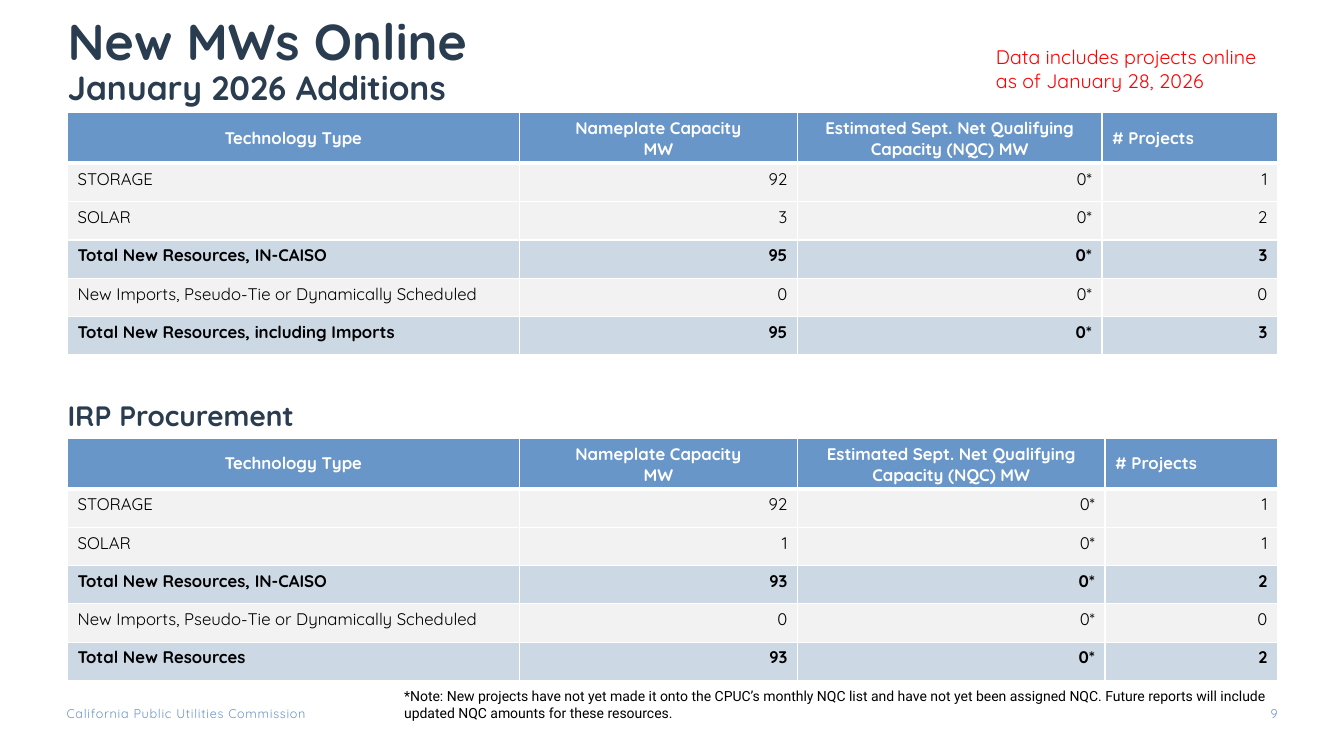
"""Build the slide of new megawatts online, with two capacity tables."""
from dataclasses import dataclass

from lxml.etree import SubElement
from pptx import Presentation
from pptx.dml.color import RGBColor
from pptx.enum.text import MSO_ANCHOR, PP_ALIGN
from pptx.oxml.ns import qn
from pptx.slide import Slide
from pptx.table import _Cell
from pptx.util import Inches, Pt

NAVY = RGBColor(0x2A, 0x3C, 0x50)
BLUE = RGBColor(0x69, 0x96, 0xC9)
PALE_BLUE = RGBColor(0xCC, 0xD8, 0xE4)
GRAY = RGBColor(0xF2, 0xF2, 0xF2)
WHITE = RGBColor(0xFF, 0xFF, 0xFF)
BLACK = RGBColor(0x00, 0x00, 0x00)
RED = RGBColor(0xFF, 0x00, 0x00)

HEADINGS = (
    "Technology Type",
    "Nameplate Capacity\vMW",
    "Estimated Sept. Net Qualifying Capacity (NQC) MW",
    "# Projects",
)
HEADER_HEIGHT = 0.5
ROW_HEIGHT = 0.38
PLAIN_MARGINS = (0.1, 0.05, 0.1, 0.05)
TITLE_MARGINS = (0, 0.05, 0.1, 0.05)
NO_MARGINS = (0, 0, 0, 0)


@dataclass(frozen=True)
class Line:
    text: str
    size: float


@dataclass(frozen=True)
class Label:
    lines: tuple[Line, ...]
    left: float
    top: float
    width: float
    height: float
    color: RGBColor
    font: str = "Quicksand"
    bold: bool = False
    margins: tuple[float, ...] = PLAIN_MARGINS
    anchor: MSO_ANCHOR = MSO_ANCHOR.TOP
    align: PP_ALIGN = PP_ALIGN.LEFT
    line_spacing: float = 1.0
    letter_spacing: int = 0


@dataclass(frozen=True)
class CapacityTable:
    top: float
    widths: tuple[float, ...]
    rows: tuple[tuple[str, ...], ...]


LABELS = (
    Label((Line("California Public Utilities Commission", 9),), 0.66, 7, 3.21, 0.15,
          BLUE, margins=NO_MARGINS, letter_spacing=50),
    Label((Line("New MWs Online", 36), Line("January 2026 Additions", 24)),
          0.67, -0.33, 12, 1.45, NAVY, bold=True, margins=TITLE_MARGINS,
          anchor=MSO_ANCHOR.BOTTOM, line_spacing=0.9),
    Label((Line("9", 9),), 12.25, 7, 0.42, 0.2, BLUE, margins=NO_MARGINS,
          align=PP_ALIGN.RIGHT),
    Label((Line("IRP Procurement", 20),), 0.67, 2.89, 12, 1.45, NAVY, bold=True,
          margins=TITLE_MARGINS, anchor=MSO_ANCHOR.BOTTOM, line_spacing=0.9),
    Label((Line("*Note: New projects have not yet made it onto the CPUC’s monthly NQC list "
                "and have not yet been assigned NQC. Future reports will include updated "
                "NQC amounts for these resources.", 10),),
          3.91, 6.77, 8.94, 0.64, BLACK, font="Roboto"),
    Label((Line("Data includes projects online", 14), Line("as of January 28, 2026", 14)),
          9.78, 0.4, 3.5, 0.64, RED),
)

TABLES = (
    CapacityTable(1.12, (4.48, 2.76, 3.02, 1.74), (
        ("STORAGE", "92", "0*", "1"),
        ("SOLAR", "3", "0*", "2"),
        ("Total New Resources, IN-CAISO", "95", "0*", "3"),
        ("New Imports, Pseudo-Tie or Dynamically Scheduled", "0", "0*", "0"),
        ("Total New Resources, including Imports", "95", "0*", "3"),
    )),
    CapacityTable(4.35, (4.48, 2.76, 3.05, 1.71), (
        ("STORAGE", "92", "0*", "1"),
        ("SOLAR", "1", "0*", "1"),
        ("Total New Resources, IN-CAISO", "93", "0*", "2"),
        ("New Imports, Pseudo-Tie or Dynamically Scheduled", "0", "0*", "0"),
        ("Total New Resources", "93", "0*", "2"),
    )),
)


def add_label(page: Slide, label: Label) -> None:
    box = page.shapes.add_textbox(Inches(label.left), Inches(label.top),
                                  Inches(label.width), Inches(label.height))
    frame = box.text_frame
    frame.word_wrap = True
    frame.vertical_anchor = label.anchor
    (frame.margin_left, frame.margin_top,
     frame.margin_right, frame.margin_bottom) = map(Inches, label.margins)
    para = frame.paragraphs[0]
    para.alignment = label.align
    para.line_spacing = label.line_spacing
    para.font.name = label.font
    para.font.bold = label.bold
    para.font.color.rgb = label.color
    para.font.size = Pt(label.lines[0].size)
    for index, line in enumerate(label.lines):
        if index:
            para.add_line_break()
        span = para.add_run()
        span.text = line.text
        if line.size != label.lines[0].size:
            span.font.size = Pt(line.size)
        if label.letter_spacing:
            span.font._element.set("spc", str(label.letter_spacing))


def add_borders(cell: _Cell, row_index: int) -> None:
    properties = cell._tc.get_or_add_tcPr()
    thick_side = {0: "lnB", 1: "lnT"}.get(row_index)
    for side in ("lnL", "lnR", "lnT", "lnB"):
        width = Pt(3 if side == thick_side else 1)
        border = SubElement(properties, qn(f"a:{side}"), w=str(width))
        fill = SubElement(border, qn("a:solidFill"))
        SubElement(fill, qn("a:srgbClr"), val=str(WHITE))


def fill_cell(cell: _Cell, text: str, row_index: int, column: int, is_total: bool) -> None:
    is_header = row_index == 0
    add_borders(cell, row_index)
    cell.fill.solid()
    cell.fill.fore_color.rgb = BLUE if is_header else PALE_BLUE if is_total else GRAY
    cell.text = text
    para = cell.text_frame.paragraphs[0]
    if is_header:
        cell.vertical_anchor = MSO_ANCHOR.MIDDLE
        para.alignment = PP_ALIGN.LEFT if column == 3 else PP_ALIGN.CENTER
    else:
        para.alignment = PP_ALIGN.RIGHT if column else PP_ALIGN.LEFT
    para.font.name = "Quicksand"
    para.font.size = Pt(12)
    para.font.bold = is_header or is_total
    para.font.color.rgb = WHITE if is_header else BLACK


def add_capacity_table(page: Slide, capacity: CapacityTable) -> None:
    rows = (HEADINGS, *capacity.rows)
    height = HEADER_HEIGHT + ROW_HEIGHT * len(capacity.rows)
    table = page.shapes.add_table(len(rows), len(HEADINGS), Inches(0.67),
                                  Inches(capacity.top), Inches(12), Inches(height)).table
    for column, width in zip(table.columns, capacity.widths):
        column.width = Inches(width)
    for row_index, texts in enumerate(rows):
        table.rows[row_index].height = Inches(ROW_HEIGHT if row_index else HEADER_HEIGHT)
        is_total = texts[0].startswith("Total")
        for column_index, text in enumerate(texts):
            fill_cell(table.cell(row_index, column_index), text, row_index,
                      column_index, is_total)


def main() -> None:
    deck = Presentation()
    deck.slide_width = Inches(13.33)
    deck.slide_height = Inches(7.5)
    page = deck.slides.add_slide(deck.slide_layouts[6])
    for label in LABELS:
        add_label(page, label)
    for capacity in TABLES:
        add_capacity_table(page, capacity)
    deck.save("out.pptx")


if __name__ == "__main__":
    main()
